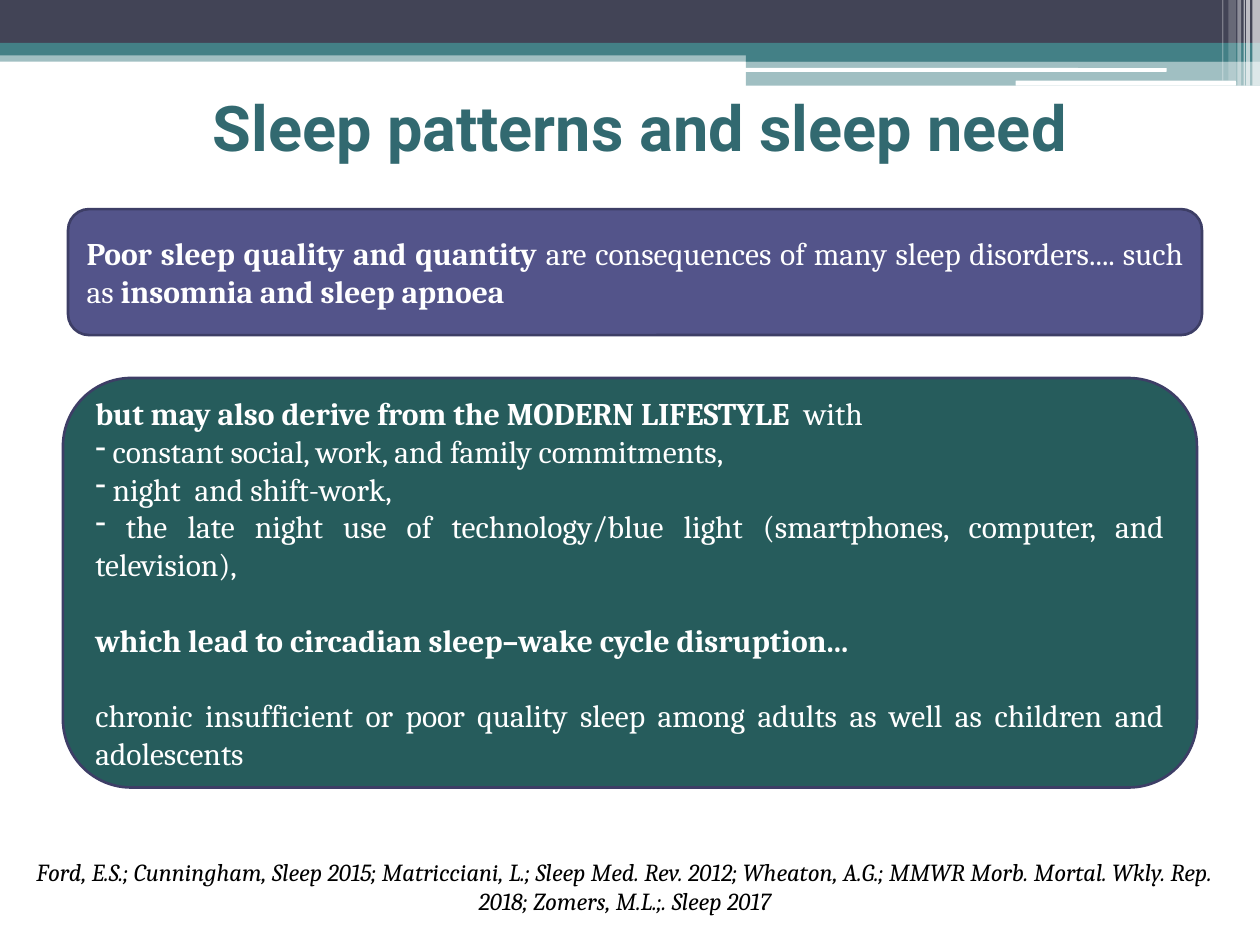
from typing import NamedTuple

from lxml.etree import SubElement as Sub
from pptx import Presentation
from pptx.dml.color import RGBColor
from pptx.enum.shapes import MSO_SHAPE as Kind
from pptx.enum.text import MSO_ANCHOR as Anchor, MSO_AUTO_SIZE as Fit, PP_ALIGN as Align
from pptx.oxml.ns import qn
from pptx.shapes.autoshape import Shape
from pptx.slide import Slide
from pptx.util import Inches, Pt

WHITE = RGBColor(0xFF, 0xFF, 0xFF)
BLACK = RGBColor(0, 0, 0)
SLATE = RGBColor(0x42, 0x44, 0x56)
TEAL = RGBColor(0x43, 0x80, 0x86)
TITLE = RGBColor(0x32, 0x69, 0x70)
PURPLE = RGBColor(0x53, 0x54, 0x8A)
GREEN = RGBColor(0x26, 0x5C, 0x5C)
EDGE = RGBColor(0x3D, 0x3E, 0x66)
SERIF = "Cambria"


class Box(NamedTuple):
    left: float
    top: float
    width: float
    height: float


class Bar(NamedTuple):
    box: Box
    fill: RGBColor
    alpha: int = 100
    kind: Kind = Kind.RECTANGLE


class Run(NamedTuple):
    text: str
    bold: bool = False


class Para(NamedTuple):
    runs: tuple[Run, ...]
    dash: bool = False
    gap: float = 0


class Card(NamedTuple):
    box: Box
    fill: RGBColor
    paras: tuple[Para, ...]


BARS = (
    Bar(Box(0, 0.4, 10, 0.09), TEAL, 50),
    Bar(Box(0, 0, 10, 0.34), SLATE),
    Bar(Box(0, 0.34, 10, 0.1), TEAL),
    Bar(Box(5.92, 0.39, 4.08, 0.1), TEAL),
    Bar(Box(5.92, 0.48, 4.08, 0.2), TEAL, 50),
    Bar(Box(5.91, 0.54, 3.35, 0.03), WHITE, kind=Kind.ROUNDED_RECTANGLE),
    Bar(Box(8.06, 0.64, 1.75, 0.04), WHITE, kind=Kind.ROUNDED_RECTANGLE),
    Bar(Box(9.94, 0, 0.06, 0.68), WHITE, 65),
    Bar(Box(9.89, 0, 0.03, 0.68), WHITE, 65),
    Bar(Box(9.87, 0, 0.01, 0.68), WHITE, 60),
    Bar(Box(9.82, 0, 0.03, 0.68), WHITE, 40),
    Bar(Box(9.75, 0, 0.06, 0.64), WHITE, 20),
    Bar(Box(9.7, 0, 0.01, 0.64), WHITE, 30),
)

CARDS = (
    Card(Box(0.54, 1.66, 9, 1), PURPLE, (
        Para((
            Run("Poor sleep quality and quantity ", True),
            Run("are consequences of many sleep disorders.... such as "),
            Run("insomnia and sleep apnoea", True),
        )),
    )),
    Card(Box(0.5, 3, 9, 3.25), GREEN, (
        Para((Run("but may also derive from the MODERN LIFESTYLE  ", True), Run("with"))),
        Para((Run(" constant social, work, and family commitments,"),), dash=True),
        Para((Run(" night  and shift-work,"),), dash=True),
        Para((Run(" the late night use of technology/blue light "
                  "(smartphones, computer, and television),"),), dash=True),
        Para((Run("which lead to circadian sleep–wake cycle disruption...", True),), gap=21.5),
        Para((Run("chronic insufficient or poor quality sleep among adults "
                  "as well as children and adolescents"),), gap=21.5),
    )),
)

SOURCES = (
    "Ford, E.S.; Cunningham, Sleep 2015; Matricciani, L.; Sleep Med. Rev. 2012; "
    "Wheaton, A.G.; MMWR Morb. Mortal. Wkly. Rep. 2018; Zomers, M.L.;. Sleep 2017"
)


def add_block(slide: Slide, kind: Kind, box: Box, fill: RGBColor) -> Shape:
    shape = slide.shapes.add_shape(kind, *map(Inches, box))
    shape.shadow.inherit = False
    shape.fill.solid()
    shape.fill.fore_color.rgb = fill
    return shape


def draw_bar(slide: Slide, bar: Bar) -> None:
    shape = add_block(slide, bar.kind, bar.box, bar.fill)
    shape.line.fill.background()
    if bar.alpha < 100:
        tint = shape.fill._xPr.find(qn("a:solidFill"))[0]
        Sub(tint, qn("a:alpha"), val=str(bar.alpha * 1000))


def draw_card(slide: Slide, card: Card) -> None:
    shape = add_block(slide, Kind.ROUNDED_RECTANGLE, card.box, card.fill)
    shape.line.color.rgb = EDGE
    shape.line.width = Pt(1.5)
    frame = shape.text_frame
    frame.word_wrap = True
    frame.vertical_anchor = Anchor.MIDDLE
    for i, para in enumerate(card.paras):
        line = frame.add_paragraph() if i else frame.paragraphs[0]
        line.alignment = Align.JUSTIFY
        line.space_before = Pt(para.gap)
        if para.dash:
            Sub(line._p.get_or_add_pPr(), qn("a:buChar"), char="-")
        line.font.size = Pt(18)
        line.font.name = SERIF
        line.font.color.rgb = WHITE
        for part in para.runs:
            run = line.add_run()
            run.text = part.text
            run.font.bold = part.bold


def draw_title(slide: Slide) -> None:
    title = slide.shapes.title
    title.left, title.top, title.width, title.height = map(Inches, (0.58, 0.67, 9, 0.67))
    frame = title.text_frame
    frame.text = "Sleep patterns and sleep need"
    frame.auto_size = Fit.NONE
    frame.vertical_anchor = Anchor.MIDDLE
    line = frame.paragraphs[0]
    line.alignment = Align.CENTER
    line.font.size = Pt(36)
    line.font.name = "Roboto"
    line.font.bold = True
    line.font.color.rgb = TITLE


def draw_sources(slide: Slide) -> None:
    frame = slide.shapes.add_textbox(*map(Inches, (0.17, 6.75, 9.58, 0.57))).text_frame
    frame.word_wrap = True
    frame.auto_size = Fit.SHAPE_TO_FIT_TEXT
    line = frame.paragraphs[0]
    line.text = SOURCES
    line.alignment = Align.CENTER
    line.font.size = Pt(14)
    line.font.name = SERIF
    line.font.italic = True
    line.font.color.rgb = BLACK


def main() -> None:
    deck = Presentation()
    deck.slide_width, deck.slide_height = Inches(10), Inches(7.5)
    slide = deck.slides.add_slide(deck.slide_layouts[5])
    for bar in BARS:
        draw_bar(slide, bar)
    draw_title(slide)
    draw_sources(slide)
    for card in CARDS:
        draw_card(slide, card)
    deck.save("out.pptx")


if __name__ == "__main__":
    main()
